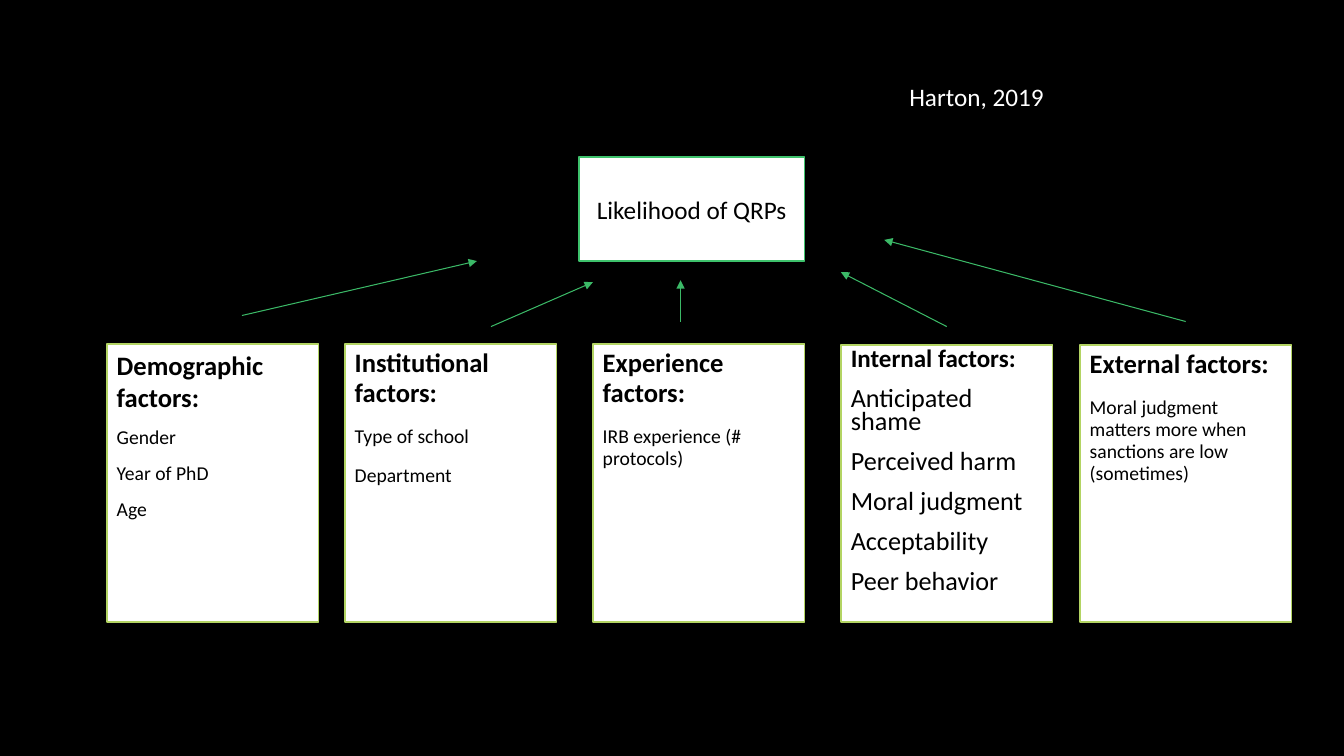
from dataclasses import dataclass

from lxml import etree
from pptx import Presentation
from pptx import util as u
from pptx.dml.color import RGBColor
from pptx.enum import shapes, text
from pptx.oxml.ns import qn

COLORS = {
    "background": "000000",
    "box": "FFFFFF",
    "ink": "000000",
    "credit": "FFFFFF",
    "factor_line": "B3D463",
    "outcome_line": "3EC26C",
    "arrow": "3BB967",
}
FONT = "Calibri"
FACTOR_WIDTH = 2.1
FACTOR_BOTTOM = 6.17


@dataclass(frozen=True)
class Spacing:
    line: float
    before: float
    after: float


LOOSE = Spacing(1.0, 2.8, 6)
NORMAL = Spacing(0.94, 10, 2)
TIGHT = Spacing(0.74, 10, 2)


@dataclass(frozen=True)
class Factor:
    left: float
    top: float
    heading: str
    items: list[str]
    spacing: Spacing = NORMAL
    heading_size: float = 19
    item_size: float = 14


@dataclass(frozen=True)
class Arrow:
    start: tuple[float, float]
    end: tuple[float, float]


FACTORS = [
    Factor(1.06, 3.41, "Demographic factors:", ["Gender", "Year of PhD", "Age"], LOOSE),
    Factor(3.42, 3.41, "Institutional factors:", ["Type of school", "Department"]),
    Factor(5.88, 3.41, "Experience factors:", ["IRB experience (# protocols)"]),
    Factor(8.34, 3.42, "Internal factors:",
           ["Anticipated shame", "Perceived harm", "Moral judgment",
            "Acceptability", "Peer behavior"], TIGHT, 17.9, 18.7),
    Factor(10.71, 3.42, "External factors:",
           ["Moral judgment matters more when sanctions are low (sometimes)"]),
]

ARROWS = [
    Arrow((2.4, 3.13), (4.73, 2.59)),
    Arrow((4.87, 3.24), (5.88, 2.8)),
    Arrow((6.75, 3.19), (6.75, 2.78)),
    Arrow((9.39, 3.24), (8.34, 2.7)),
    Arrow((11.76, 3.19), (8.77, 2.38)),
]


def color(name: str) -> RGBColor:
    return RGBColor.from_string(COLORS[name])


def apply(target, values: dict) -> None:
    for name, value in values.items():
        setattr(target, name, value)


def write(para, words: str, size: float, ink: str = "ink", bold: bool = False) -> None:
    span = para.add_run()
    span.text = words
    apply(span.font, {"name": FONT, "size": u.Pt(size), "bold": bold})
    span.font.color.rgb = color(ink)


def add_box(slide, left: float, top: float, width: float, height: float,
            line: str, anchor):
    box = slide.shapes.add_shape(shapes.MSO_SHAPE.RECTANGLE, u.Inches(left),
                                 u.Inches(top), u.Inches(width), u.Inches(height))
    box.shadow.inherit = False
    box.fill.solid()
    box.fill.fore_color.rgb = color("box")
    box.line.color.rgb = color(line)
    box.line.width = u.Pt(1.25)
    apply(box.text_frame, {"word_wrap": True, "vertical_anchor": anchor})
    return box


def add_factor(slide, factor: Factor) -> None:
    box = add_box(slide, factor.left, factor.top, FACTOR_WIDTH,
                  FACTOR_BOTTOM - factor.top, "factor_line", text.MSO_ANCHOR.TOP)
    frame = box.text_frame
    for index, words in enumerate([factor.heading, *factor.items]):
        is_heading = index == 0
        para = frame.paragraphs[0] if is_heading else frame.add_paragraph()
        apply(para, {
            "alignment": text.PP_ALIGN.LEFT,
            "line_spacing": factor.spacing.line,
            "space_before": u.Pt(factor.spacing.before),
            "space_after": u.Pt(factor.spacing.after),
        })
        size = factor.heading_size if is_heading else factor.item_size
        write(para, words, size, bold=is_heading)


def add_arrow(slide, arrow: Arrow) -> None:
    ends = [u.Inches(value) for value in (*arrow.start, *arrow.end)]
    connector = slide.shapes.add_connector(shapes.MSO_CONNECTOR.STRAIGHT, *ends)
    connector.line.color.rgb = color("arrow")
    connector.line.width = u.Pt(0.75)
    properties = connector._element.spPr
    head = etree.SubElement(properties.get_or_add_ln(), qn("a:tailEnd"))
    head.set("type", "triangle")
    etree.SubElement(properties, qn("a:effectLst"))


def main() -> None:
    deck = Presentation()
    apply(deck, {"slide_width": u.Inches(13.33), "slide_height": u.Inches(7.5)})
    slide = deck.slides.add_slide(deck.slide_layouts[6])
    slide.background.fill.solid()
    slide.background.fill.fore_color.rgb = color("background")

    # Outcome
    outcome = add_box(slide, 5.74, 1.56, 2.24, 1.03, "outcome_line",
                      text.MSO_ANCHOR.MIDDLE)
    para = outcome.text_frame.paragraphs[0]
    para.alignment = text.PP_ALIGN.CENTER
    write(para, "Likelihood of QRPs", 18)

    # Factors and the arrows towards the outcome
    for factor in FACTORS:
        add_factor(slide, factor)
    for arrow in ARROWS:
        add_arrow(slide, arrow)

    # Citation
    citation = slide.shapes.add_textbox(u.Inches(8.92), u.Inches(0.76),
                                        u.Inches(1.61), u.Inches(0.41))
    citation.text_frame.word_wrap = True
    write(citation.text_frame.paragraphs[0], "Harton, 2019", 18, "credit")

    deck.save("out.pptx")


if __name__ == "__main__":
    main()
